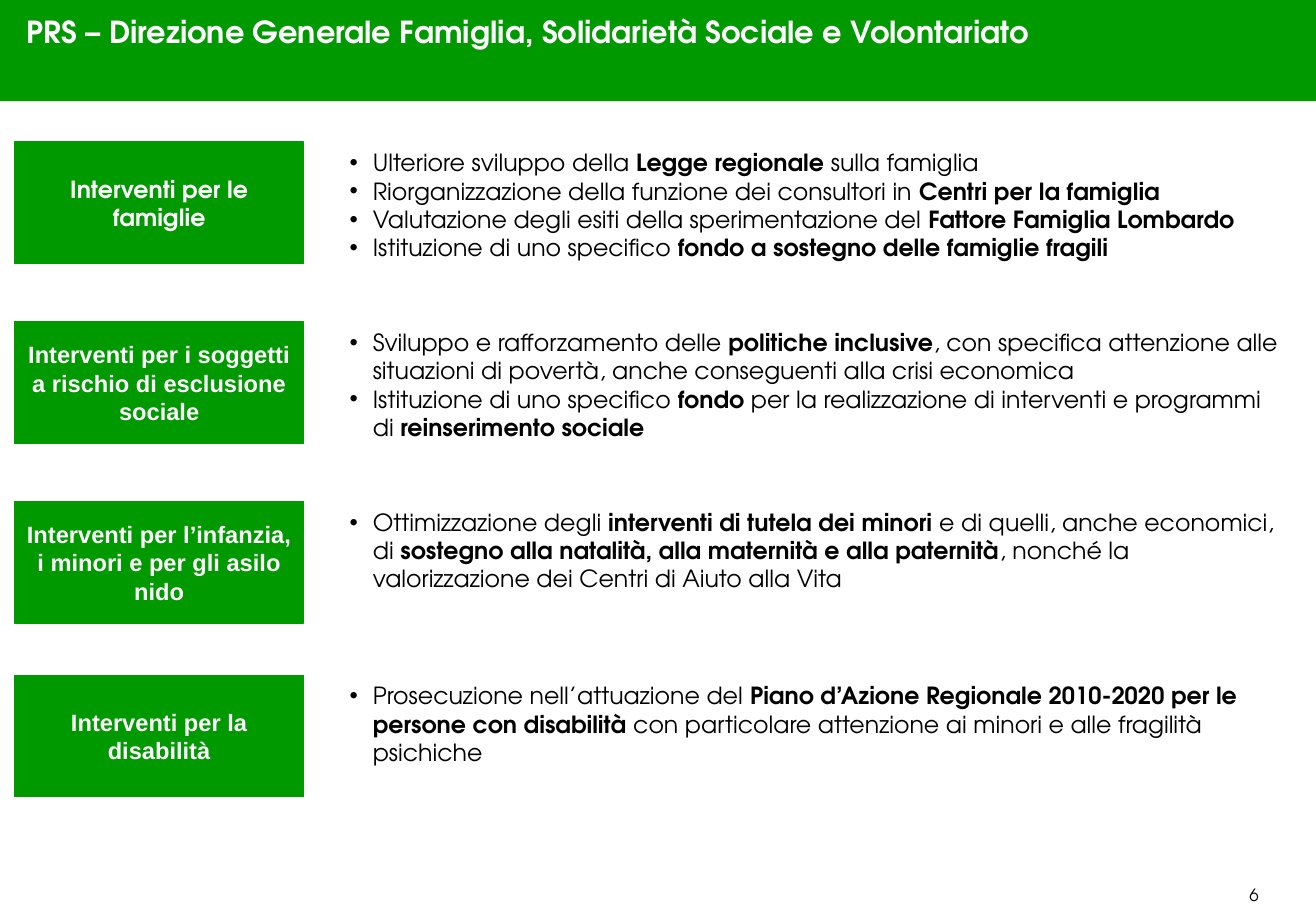
from lxml import etree
from pptx import Presentation
from pptx import util as u
from pptx.dml.color import RGBColor
from pptx.enum import shapes, text
from pptx.oxml.ns import qn

TITLE = "PRS – Direzione Generale Famiglia, Solidarietà Sociale e Volontariato"
PAGE_NUMBER = "6"
MAIN_FONT, LABEL_FONT = "TeX Gyre Adventor", "Arial"
BOLD_MARK = "|"
SECTIONS = [
    (1.17, "Interventi per le famiglie", MAIN_FONT, [
        "Ulteriore sviluppo della |Legge regionale |sulla famiglia",
        "Riorganizzazione della funzione dei consultori in |Centri per la famiglia",
        "Valutazione degli esiti della sperimentazione del |Fattore Famiglia Lombardo",
        "Istituzione di uno specifico |fondo a sostegno delle famiglie fragili",
    ]),
    (2.65, "Interventi per i soggetti a rischio di esclusione sociale", LABEL_FONT, [
        "Sviluppo e rafforzamento delle |politiche inclusive|, con specifica attenzione "
        "alle situazioni di povertà, anche conseguenti alla crisi economica",
        "Istituzione di uno specifico |fondo| per la realizzazione di interventi e "
        "programmi di |reinserimento sociale",
    ]),
    (4.13, "Interventi per l’infanzia, i minori e per gli asilo nido", LABEL_FONT, [
        "Ottimizzazione degli |interventi di tutela dei minori |e di quelli, anche "
        "economici, di |sostegno alla natalità, alla maternità e alla paternità|, "
        "nonché la valorizzazione dei Centri di Aiuto alla Vita",
    ]),
    (5.56, "Interventi per la disabilità", LABEL_FONT, [
        "Prosecuzione nell’attuazione del |Piano d’Azione Regionale 2010-2020 per le "
        "persone con disabilità |con particolare attenzione ai minori e alle fragilità "
        "psichiche",
    ]),
]

GREEN = RGBColor(0x00, 0x99, 0x00)
WHITE = RGBColor(0xFF, 0xFF, 0xFF)
BLACK = RGBColor(0x00, 0x00, 0x00)

WIDTH, HEIGHT = 10.83, 7.5
BAND_HEIGHT = HEIGHT / 9
LABEL_LEFT, LABEL_WIDTH, LABEL_HEIGHT = 0.12, 2.38, 1
LIST_LEFT, LIST_WIDTH = 2.78, 7.84
LINE_HEIGHT, PADDING = 0.235, 0.1
INDENT = u.Inches(0.19)


def add_span(para, words, size, color, bold=False, font=MAIN_FONT):
    span = para.add_run()
    span.text = words
    span.font.name, span.font.size, span.font.bold = font, u.Pt(size), bold
    span.font.color.rgb = color


def add_block(page, left, top, width, height):
    block = page.shapes.add_shape(
        shapes.MSO_SHAPE.RECTANGLE, *map(u.Inches, (left, top, width, height)))
    block.shadow.inherit = False
    block.fill.solid()
    block.fill.fore_color.rgb = GREEN
    block.line.color.rgb = GREEN
    block.line.width = u.Pt(0.75)
    return block


def add_text_frame(page, left, top, width, height):
    box = page.shapes.add_textbox(*map(u.Inches, (left, top, width, height)))
    box.text_frame.word_wrap = True
    return box.text_frame


def add_bullet(para):
    properties = para._p.get_or_add_pPr()
    properties.set("marL", str(INDENT))
    properties.set("indent", str(-INDENT))
    etree.SubElement(properties, qn("a:buFont")).set("typeface", LABEL_FONT)
    etree.SubElement(properties, qn("a:buChar")).set("char", "•")


def add_section(page, top, label, label_font, points):
    lines = max(3, len(points), 2 * len(points))
    frame = add_text_frame(page, LIST_LEFT, top, LIST_WIDTH,
                           min(lines, 4) * LINE_HEIGHT + PADDING)
    for index, point in enumerate(points):
        para = frame.add_paragraph() if index else frame.paragraphs[0]
        add_bullet(para)
        for position, words in enumerate(point.split(BOLD_MARK)):
            add_span(para, words, 14, BLACK, bold=position % 2 == 1)

    block = add_block(page, LABEL_LEFT, top, LABEL_WIDTH, LABEL_HEIGHT)
    block.text_frame.word_wrap = True
    block.text_frame.vertical_anchor = text.MSO_ANCHOR.MIDDLE
    para = block.text_frame.paragraphs[0]
    para.alignment = text.PP_ALIGN.CENTER
    add_span(para, label, 14, WHITE, bold=True, font=label_font)


def main():
    deck = Presentation()
    deck.slide_width, deck.slide_height = u.Inches(WIDTH), u.Inches(HEIGHT)
    page = deck.slides.add_slide(deck.slide_layouts[6])

    band = add_block(page, 0, 0, WIDTH, BAND_HEIGHT)
    band.line.fill.background()

    number = add_text_frame(page, 9.81, 7.23, 1.02, 0.27).paragraphs[0]
    number.alignment = text.PP_ALIGN.CENTER
    add_span(number, PAGE_NUMBER, 10, BLACK)

    title = add_text_frame(page, LABEL_LEFT, 0.06, 10.49, 0.4).paragraphs[0]
    add_span(title, TITLE, 18, WHITE, bold=True)

    for section in SECTIONS:
        add_section(page, *section)
    deck.save("out.pptx")


if __name__ == "__main__":
    main()
